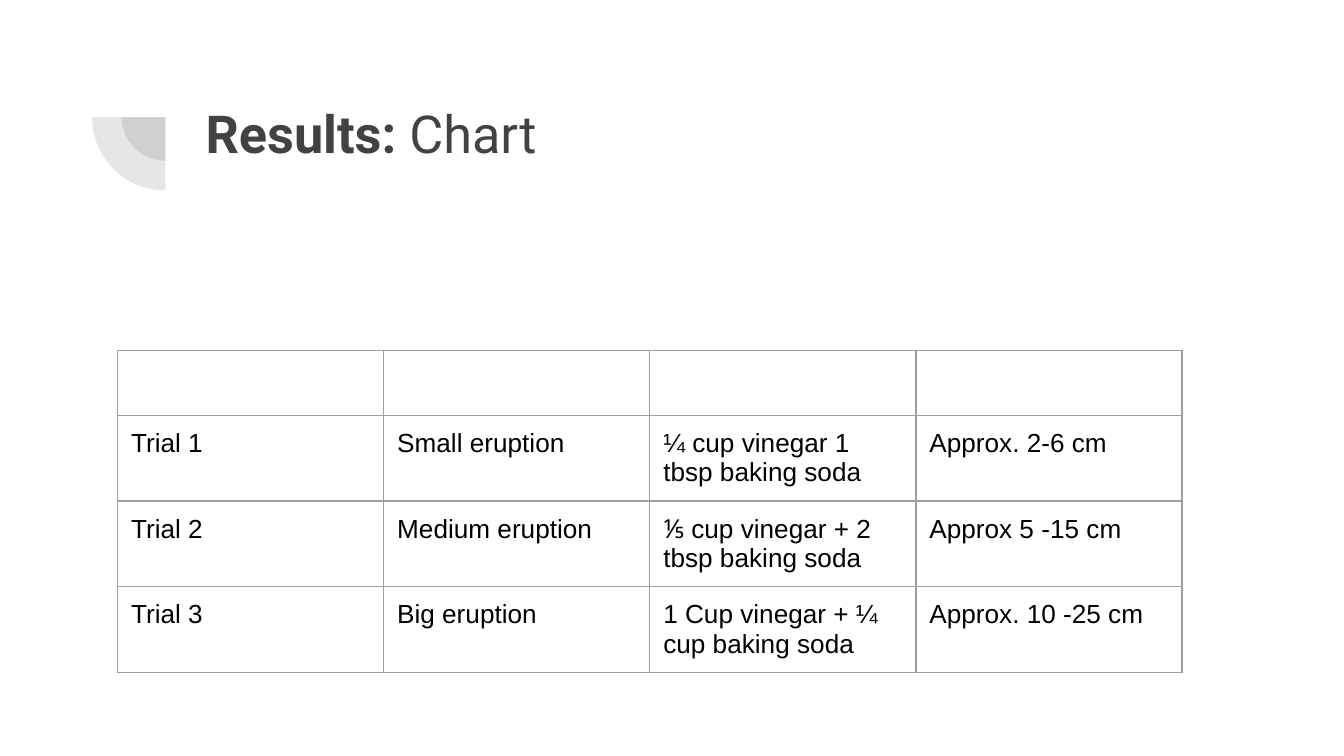
from lxml import etree
from pptx import Presentation
from pptx import util as u
from pptx.dml.color import RGBColor
from pptx.enum import shapes, text
from pptx.oxml.ns import qn

COLORS = {"title": "424242", "body": "000000", "border": "9E9E9E"}
ALPHA = 13
TRIALS = [
    ("Trial 1", "Small eruption", "¼ cup vinegar 1 tbsp baking soda", "Approx. 2-6 cm"),
    ("Trial 2", "Medium eruption", "⅕ cup vinegar + 2 tbsp baking soda", "Approx 5 -15 cm"),
    ("Trial 3", "Big eruption", "1 Cup vinegar + ¼ cup baking soda", "Approx. 10 -25 cm"),
]


def style(font, name, size, color, bold=False):
    font.name = name
    font.size = u.Pt(size)
    font.bold = bold
    font.color.rgb = RGBColor.from_string(COLORS[color])


# Widescreen 16:9 slide
deck = Presentation()
deck.slide_width = u.Inches(10)
deck.slide_height = deck.slide_width * 9 // 16
W, H = deck.slide_width, deck.slide_height
slide = deck.slides.add_slide(deck.slide_layouts[5])

# Quarter-circle ornament: two pies sharing one centre
center_x, center_y = W * 0.123, H * 0.155
for diameter in (W * 0.065, W * 0.109):
    quarter = slide.shapes.add_shape(
        shapes.MSO_SHAPE.PIE, int(center_x - diameter / 2),
        int(center_y - diameter / 2), int(diameter), int(diameter))
    quarter.rotation = 270
    quarter.adjustments[0], quarter.adjustments[1] = 108, 162
    quarter.shadow.inherit = False
    quarter.line.fill.background()
    quarter.fill.solid()
    quarter.fill.fore_color.rgb = RGBColor.from_string(COLORS["title"])
    tint = quarter._element.spPr.find(".//" + qn("a:srgbClr"))
    etree.SubElement(tint, qn("a:alpha"), val=str(ALPHA * 1000))

# Title
title = slide.shapes.title
title.left, title.top = int(W * 0.143), int(H * 0.116)
title.width, title.height = int(W * 0.769), int(H * 0.194)
heading = title.text_frame
heading.word_wrap = True
heading.auto_size = text.MSO_AUTO_SIZE.NONE
heading.vertical_anchor = text.MSO_ANCHOR.TOP
heading.margin_left = heading.margin_right = u.Inches(0.1)
heading.margin_top = heading.margin_bottom = u.Inches(0.1)
heading.paragraphs[0].alignment = text.PP_ALIGN.LEFT
for words, bold in (("Results: ", True), ("Chart", False)):
    run = heading.paragraphs[0].add_run()
    run.text = words
    style(run.font, "Roboto", 28, "title", bold)

# Results table: an empty header row, then one row per trial
rows = [("",) * 4, *TRIALS]
column_width, row_height = int(W * 0.198), int(H * 0.075)
results = slide.shapes.add_table(
    len(rows), 4, int(W * 0.0875), int(H * 0.464),
    column_width * 4, row_height * len(rows)).table
results.first_row = results.horz_banding = False
for r, row in enumerate(rows):
    for c, words in enumerate(row):
        cell = results.cell(r, c)
        cell.margin_left = cell.margin_right = u.Inches(0.1)
        cell.margin_top = cell.margin_bottom = u.Inches(0.1)
        cell.fill.background()
        entry = cell.text_frame.paragraphs[0]
        if words:
            entry.text = words
            style(entry.runs[0].font, "Arial", 14, "body")
        else:
            # The default text size of a blank cell sets the header's height
            mark = etree.SubElement(entry._p, qn("a:endParaRPr"), sz="1800")
            etree.SubElement(mark, qn("a:latin"), typeface="Arial")
        # Borders come before the fill in the cell properties
        properties = cell._tc.get_or_add_tcPr()
        for i, side in enumerate(("lnL", "lnR", "lnT", "lnB")):
            border = etree.Element(qn("a:" + side), w=str(u.Pt(0.75)))
            solid = etree.SubElement(border, qn("a:solidFill"))
            etree.SubElement(solid, qn("a:srgbClr"), val=COLORS["border"])
            properties.insert(i, border)

deck.save("out.pptx")
